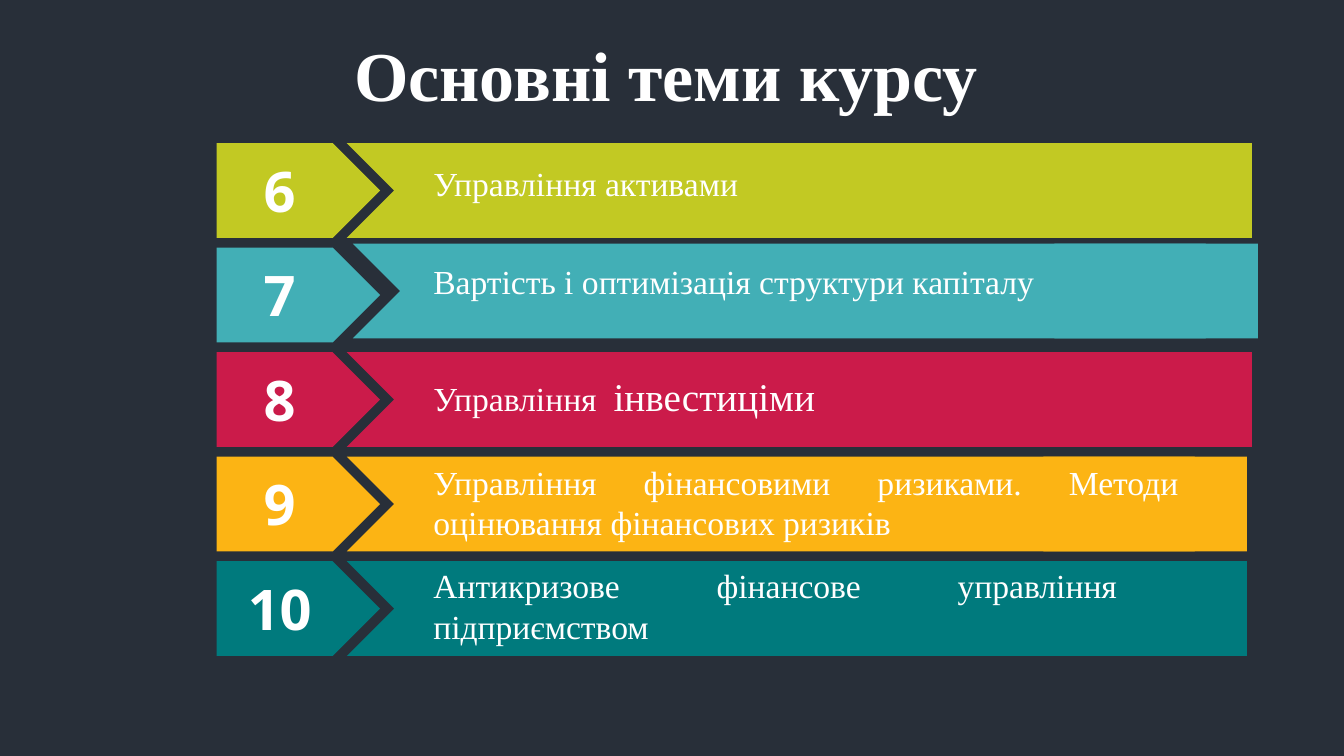
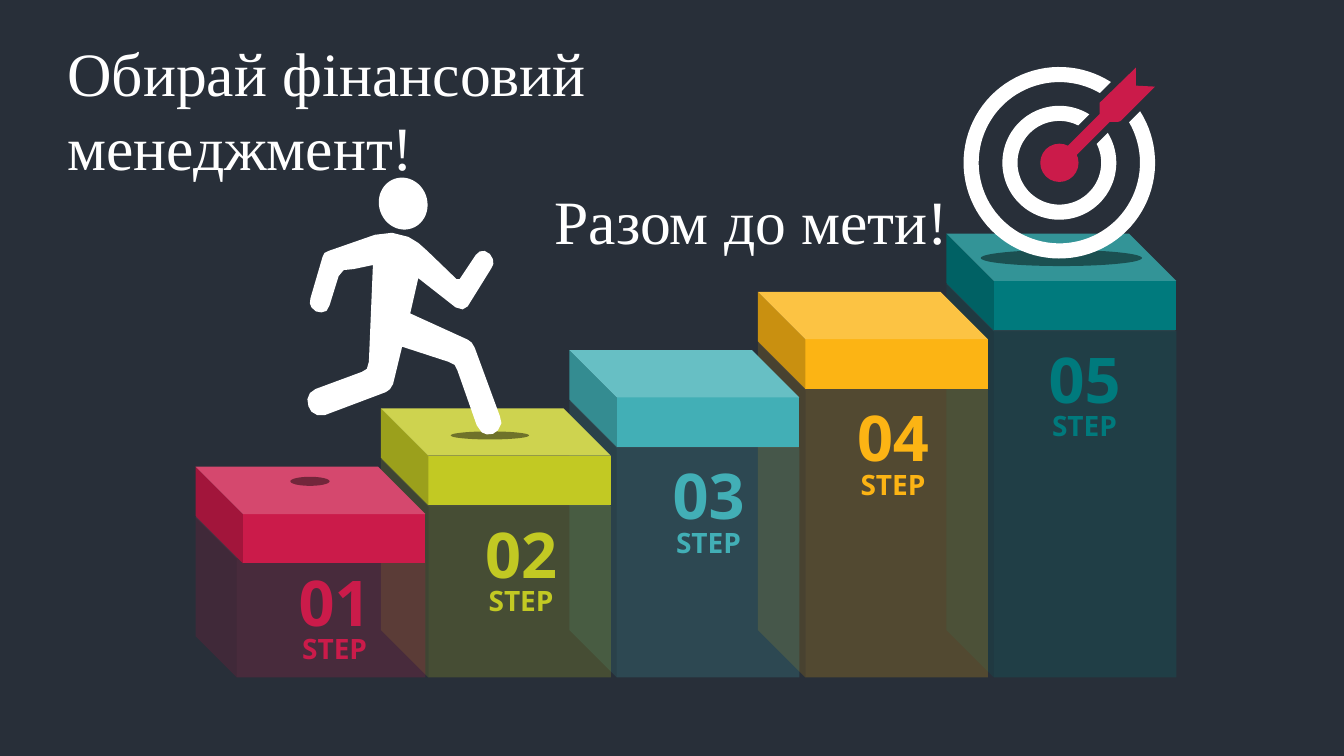
import math
from pptx import Presentation
from pptx.dml.color import RGBColor
from pptx.enum import shapes, text
from pptx.oxml import ns
from pptx import util as u
from lxml import etree

ROWS = 75
COLS = ROWS * 16 / 9
SHAPE = shapes.MSO_SHAPE
ALIGN = {"l": text.PP_ALIGN.LEFT, "c": text.PP_ALIGN.CENTER,
         "r": text.PP_ALIGN.RIGHT, "j": text.PP_ALIGN.JUSTIFY}
COLORS = {"night": "282F39", "white": "FFFFFF", "black": "000000", "lime": "C2C923",
          "aqua": "42AFB6", "crimson": "CB1B4A", "amber": "FCB414", "teal": "007A7D"}
SERIF, SANS = "Times New Roman", "Open Sans"

RUNNER = [
    (37, 26.3), (35.1, 26.7), (34.1, 26.8), (33.6, 27.4), (32.7, 30.3), (32.4, 30.85),
    (31.9, 31), (31.35, 30.9), (30.9, 30.5), (30.75, 30.1), (30.8, 29.6), (32, 25.5),
    (32.2, 25.1), (32.6, 24.9), (37.2, 23.3), (38.9, 23.1), (40.5, 23.5), (41.5, 24.1),
    (42.4, 24.9), (45.3, 27.7), (45.6, 27.7), (47.2, 25.3), (47.6, 24.95), (48.1, 24.9),
    (48.6, 25.2), (48.9, 25.7), (48.95, 26.2), (48.7, 26.7), (46.4, 30.4), (45.9, 30.7),
    (45.2, 30.5), (41.5, 27.6), (40.7, 31.1), (46.4, 33.7), (46.8, 34), (47.1, 34.5),
    (49.6, 41.3), (49.75, 42), (49.4, 42.7), (48.9, 43.05), (48.3, 43.1), (47.8, 42.9),
    (47.3, 42.2), (45.4, 36.8), (45.1, 36.2), (44.5, 35.9), (39.9, 34.4), (39, 38.1),
    (38.7, 38.6), (38.3, 38.9), (32.2, 41.2), (31.5, 41.2), (30.9, 40.85), (30.6, 40.3),
    (30.5, 39.6), (30.75, 39), (31.3, 38.6), (35.9, 36.9), (36.4, 36.6), (36.6, 35.9),
]
DART = [(112.7, 6.7), (112.7, 8.5), (114.6, 8.6), (111.2, 12), (110.9, 12.1), (110.1, 12.1),
        (106.5, 15.7), (105.6, 14.8), (109.1, 11.3), (109.1, 10.2)]


class Deck:
    def __init__(self):
        self.prs = Presentation()
        self.prs.slide_width, self.prs.slide_height = u.Inches(40 / 3), u.Inches(7.5)
        self.cell = self.prs.slide_height / ROWS
        self.slide = None

    def grid(self, *cells):
        return [u.Emu(round(c * self.cell)) for c in cells]

    def new_slide(self):
        self.slide = self.prs.slides.add_slide(self.prs.slide_layouts[6])
        self.paint(self.slide.background.fill, "night")

    def paint(self, fill, color, alpha=100):
        fill.solid()
        fill.fore_color.rgb = RGBColor.from_string(COLORS[color])
        return fill

    def style(self, sp, color, alpha=100):
        self.paint(sp.fill, color)
        sp.line.fill.background()
        sp.shadow.inherit = False
        if alpha < 100:
            clr = sp._element.spPr.find(".//" + ns.qn("a:srgbClr"))
            etree.SubElement(clr, ns.qn("a:alpha")).set("val", str(alpha * 1000))
        return sp

    def shape(self, kind, box, color, alpha=100):
        sp = self.slide.shapes.add_shape(kind, *self.grid(*box))
        return self.style(sp, color, alpha)

    def cube(self, x, y, w, h, color, depth=4.7, alpha=100):
        sp = self.shape(SHAPE.CUBE, (x, y, w, h), color, alpha)
        sp.adjustments[0] = depth / min(w, h)
        sp._element.spPr.find(ns.qn("a:xfrm")).set("flipH", "1")

    def outline(self, points, color):
        pts = [self.grid(*pt) for pt in points]
        fb = self.slide.shapes.build_freeform(*pts[0])
        fb.add_line_segments(pts[1:], close=True)
        return self.style(fb.convert_to_shape(), color)

    def cut_ring(self, cx, cy, outer, inner, half_gap, color):
        def arc(radius):
            gap = math.asin(half_gap / radius)
            start, sweep, steps = gap - math.pi / 4, 2 * (math.pi - gap), 90
            turns = [start + sweep * i / steps for i in range(steps + 1)]
            return [(cx + radius * math.cos(t), cy + radius * math.sin(t)) for t in turns]
        self.outline(arc(outer) + arc(inner)[::-1], color)

    def text(self, box, *paragraphs, size=24, font=SERIF, color="white", bold=False, align="l"):
        tf = self.slide.shapes.add_textbox(*self.grid(*box)).text_frame
        tf.word_wrap = True
        for i, runs in enumerate(paragraphs):
            p = tf.paragraphs[0] if i == 0 else tf.add_paragraph()
            p.alignment = ALIGN[align[min(i, len(align) - 1)]]
            for run in [runs] if isinstance(runs, str) else runs:
                words, points = (run, size) if isinstance(run, str) else run
                r = p.add_run()
                r.text = words
                r.font.size, r.font.name, r.font.bold = u.Pt(points), font, bold
                r.font.color.rgb = RGBColor.from_string(COLORS[color])

    def banner(self, x, y, width, color):
        height, end = 9.4, 20.2
        self.shape(SHAPE.CHEVRON, (x, y, width, height), color)
        self.shape(SHAPE.RECTANGLE, (x + width + 0.5 - end, y, end, height), color)


def topics(deck):
    deck.new_slide()
    deck.text((13.2, 2.6, 105.8, 9.4), "Основні теми курсу", size=50, bold=True, align="c")
    rows = [
        ("lime", (34.4, 0, 89.3), (1.5, 50.8, 5), "Управління активами"),
        ("aqua", (35, -0.4, 89.3), (0.8, 71.2, 5), "Вартість і оптимізація структури капіталу"),
        ("crimson", (34.4, 0, 89.3), (1.5, 50.8, 5.7), ["Управління  ", ("інвестиціми", 28)]),
        ("amber", (34.4, 0, 88.8), (0, 75.9, 9.1),
         "Управління фінансовими ризиками. Методи оцінювання фінансових ризиків"),
        ("teal", (34.4, 0, 88.8), (-0.1, 69.8, 9.1),
         "Антикризове фінансове управління підприємством"),
    ]
    for i, (color, (x, shift, width), (drop, wide, high), topic) in enumerate(rows):
        y = 14.2 + 10.37 * i
        deck.shape(SHAPE.PENTAGON, (21.5, y, 16.2, 9.4), color)
        deck.banner(x, y + shift, width, color)
        deck.text((22.2, y + 0.8, 11.1, 7.7), str(6 + i), size=40, font=SANS, bold=True, align="c")
        deck.text((42, y + drop, wide, high), topic, align="j")


def steps(deck):
    deck.new_slide()
    stairs = [("crimson", 19.4, 26.7, 4.1), ("lime", 37.8, 45.2, 4.7), ("aqua", 56.5, 63.8, 4.7),
              ("amber", 75.2, 82.1, 4.7), ("teal", 93.9, 101.1, 4.7)]
    rise, width, floor = 5.78, 22.8, 67.2
    tops = [46.3 - rise * i for i in range(len(stairs))]
    for (color, x, _, depth), top in reversed(list(zip(stairs, tops))):
        deck.cube(x, top + 5, width, floor - top - 5, color, depth, alpha=20)
    for (color, x, _, _), top in zip(stairs, tops):
        deck.cube(x, top, width, 9.6, color)

    cx, cy = 105.1, 16.15
    deck.shape(SHAPE.OVAL, (97.3, 24.8, 16, 1.6), "black", 46)
    deck.cut_ring(cx, cy, 9.5, 8, 2.05, "white")
    deck.cut_ring(cx, cy, 5.65, 4.15, 1.3, "white")
    deck.shape(SHAPE.OVAL, (cx - 1.9, cy - 1.9, 3.8, 3.8), "crimson")
    deck.outline(DART, "crimson")

    deck.text((5.7, 3, 89.4, 15.8), "Обирай фінансовий менеджмент!", "Разом до мети!",
              size=44, align="lr")
    for i, (color, _, x, _) in enumerate(stairs):
        y = min(56.4 - rise * i, 55.4)
        look = dict(font=SANS, color=color, bold=True, align="c")
        deck.text((x, y, 13, 8.6), f"{i + 1:02}", size=45, **look)
        deck.text((x, y + 6.8, 13, 4.4), "STEP", size=20, **look)

    deck.shape(SHAPE.OVAL, (44.7, 42.8, 7.8, 0.8), "black", 46)
    deck.outline(RUNNER, "white")
    deck.shape(SHAPE.OVAL, (37.6, 17.6, 4.8, 5.2), "white").rotation = 340
    deck.shape(SHAPE.OVAL, (28.8, 47.3, 3.9, 0.9), "black", 46)


def main():
    deck = Deck()
    topics(deck)
    steps(deck)
    deck.prs.save("out.pptx")


if __name__ == "__main__":
    main()
